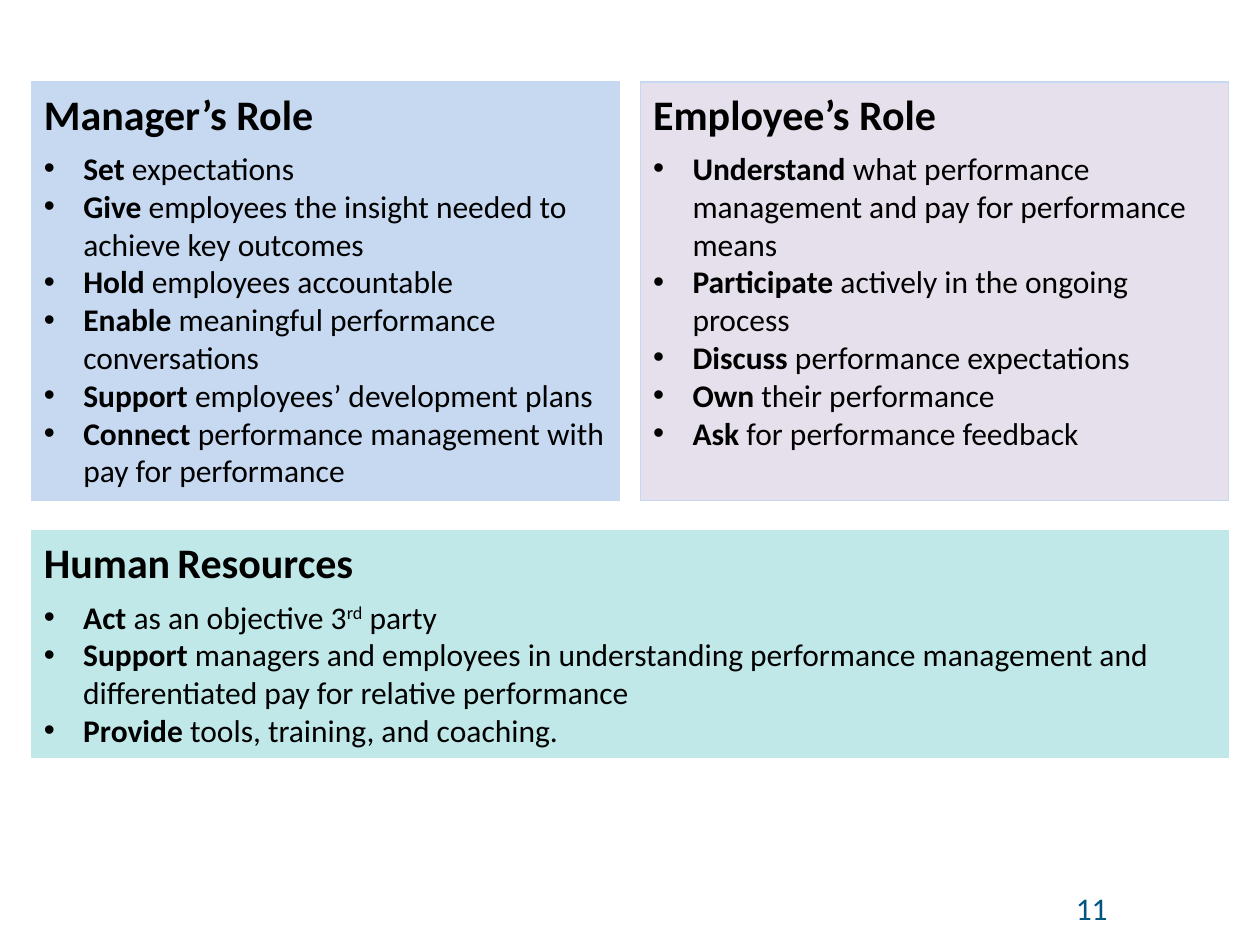
from lxml.etree import SubElement
from pptx import Presentation
from pptx.dml.color import RGBColor
from pptx.enum.shapes import MSO_SHAPE
from pptx.enum.text import MSO_ANCHOR, MSO_AUTO_SIZE, PP_ALIGN
from pptx.oxml.ns import qn
from pptx.util import Inches, Pt

BLACK = RGBColor(0x00, 0x00, 0x00)
BLUE = RGBColor(0xC6, 0xD9, 0xF1)
LILAC = RGBColor(0xE6, 0xE0, 0xEC)
TEAL = RGBColor(0xC1, 0xE8, 0xE9)
NAVY = RGBColor(0x00, 0x55, 0x81)
FONT = "Calibri"

# Two columns and two rows, in inches
MARGIN, GUTTER = 0.25, 0.17
FULL_W = 10 - 2 * MARGIN
COL_W = (FULL_W - GUTTER) / 2
COL_2 = MARGIN + COL_W + GUTTER
ROW_1, ROW_1_H = 0.65, 3.32
ROW_2, ROW_2_H = 4.21, 1.8
INDENT = Pt(22.5)

# Heading as (text, size) runs, box, fill, line, duties as (bold verb, rest);
# ^ encloses superscript
PANELS = [
    ([("Manager’s Role", 24)], (MARGIN, ROW_1, COL_W, ROW_1_H), BLUE, BLUE, [
        ("Set", " expectations"),
        ("Give", " employees the insight needed to achieve key outcomes"),
        ("Hold", " employees accountable"),
        ("Enable", " meaningful performance conversations"),
        ("Support", " employees’ development plans"),
        ("Connect", " performance management with pay for performance"),
    ]),
    ([("Employee’s Role", 24)], (COL_2, ROW_1, COL_W, ROW_1_H), LILAC, BLUE, [
        ("Understand", " what performance management and pay for performance means"),
        ("Participate", " actively in the ongoing process"),
        ("Discuss", " performance expectations"),
        ("Own", " their performance"),
        ("Ask", " for performance feedback"),
    ]),
    ([("Human", 24), (" ", 18), ("Resources", 24)],
     (MARGIN, ROW_2, FULL_W, ROW_2_H), TEAL, TEAL, [
        ("Act", " as an objective 3^rd^ party"),
        ("Support", " managers and employees in understanding performance "
                    "management and differentiated pay for relative performance"),
        ("Provide", " tools, training, and coaching."),
    ]),
]


def add_run(p, text, size, color=BLACK, bold=False):
    r = p.add_run()
    r.text = text
    r.font.name, r.font.size, r.font.bold = FONT, Pt(size), bold
    r.font.color.rgb = color
    return r


def add_bullet(p):
    pPr = p._p.get_or_add_pPr()
    pPr.set("marL", str(INDENT))
    pPr.set("indent", str(-INDENT))
    SubElement(pPr, qn("a:buFont"), typeface="Arial")
    SubElement(pPr, qn("a:buChar"), char="•")


prs = Presentation()
prs.slide_width, prs.slide_height = Inches(10), Inches(7.5)
s = prs.slides.add_slide(prs.slide_layouts[6])

for heading, box, fill, line, duties in PANELS:
    sp = s.shapes.add_shape(MSO_SHAPE.RECTANGLE, *map(Inches, box))
    sp.shadow.inherit = False
    sp.fill.solid()
    sp.fill.fore_color.rgb = fill
    sp.line.color.rgb = line
    sp.line.width = Pt(0.75)

    tf = sp.text_frame
    tf.word_wrap = True
    tf.auto_size = MSO_AUTO_SIZE.SHAPE_TO_FIT_TEXT
    tf.vertical_anchor = MSO_ANCHOR.TOP
    p = tf.paragraphs[0]
    p.alignment = PP_ALIGN.LEFT
    p.space_after = Pt(6)
    for text, size in heading:
        add_run(p, text, size, bold=True)

    for verb, rest in duties:
        p = tf.add_paragraph()
        p.alignment = PP_ALIGN.LEFT
        add_bullet(p)
        add_run(p, verb, 18, bold=True)
        for i, part in enumerate(rest.split("^")):
            r = add_run(p, part, 18)
            if i % 2:
                r._r.get_or_add_rPr().set("baseline", "30000")

number = s.shapes.add_textbox(Inches(7.5), Inches(7.01), Inches(2.33), Inches(0.4))
number.text_frame.word_wrap = True
p = number.text_frame.paragraphs[0]
p.alignment = PP_ALIGN.CENTER
add_run(p, "11", 18, NAVY)

prs.save("out.pptx")
